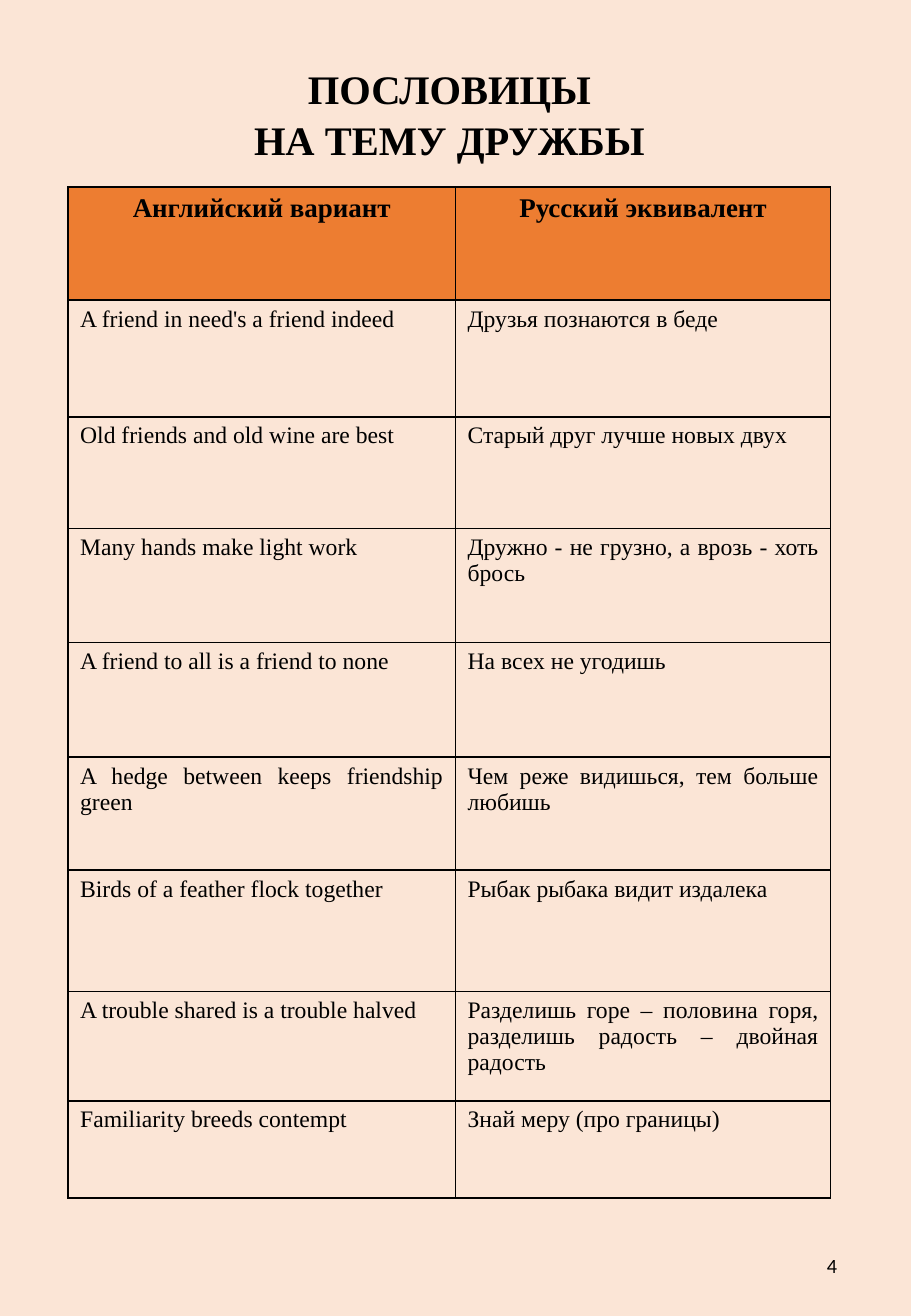
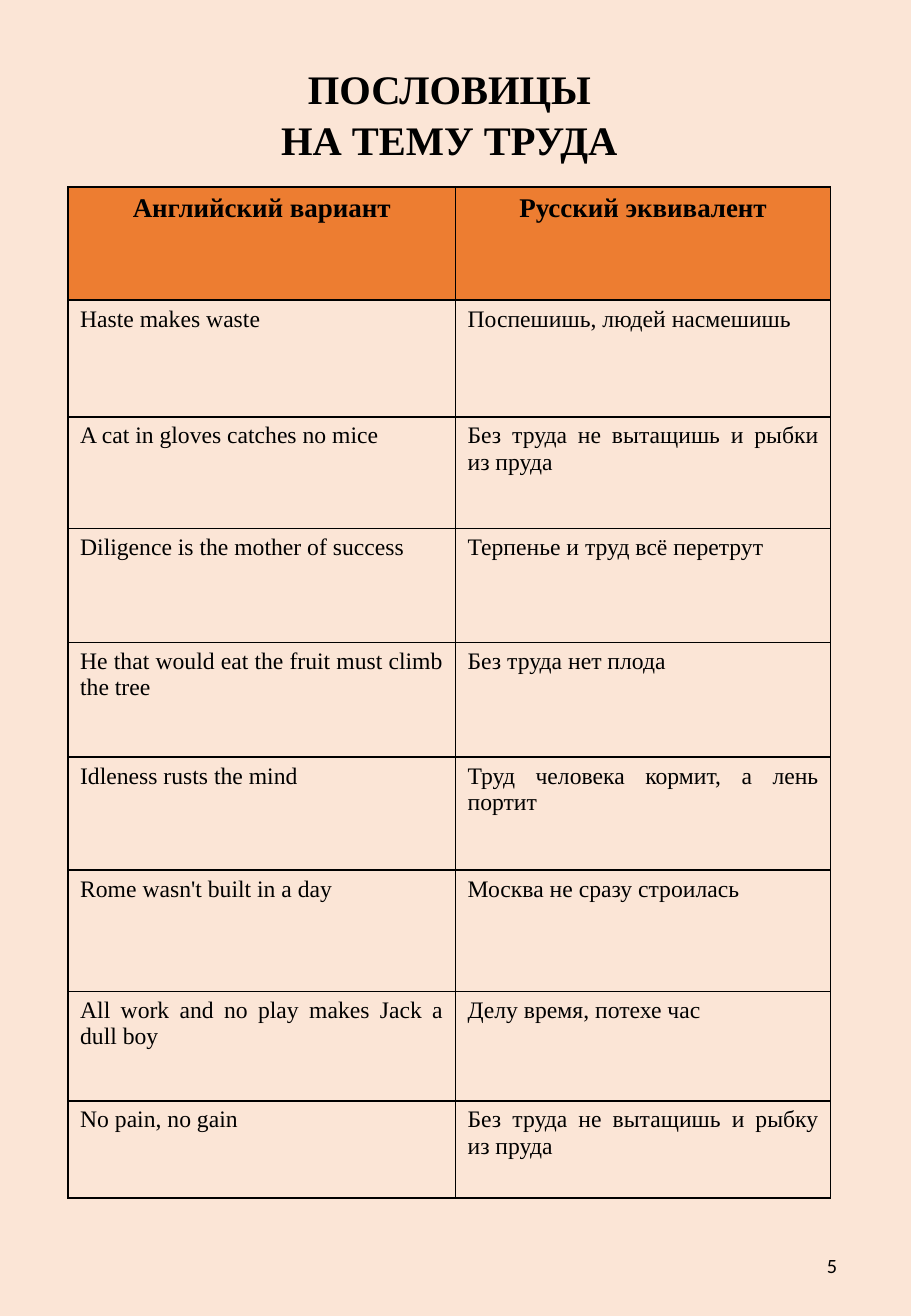
from lxml import etree
from pptx import Presentation
from pptx.dml.color import RGBColor
from pptx.enum.text import MSO_ANCHOR, MSO_AUTO_SIZE, PP_ALIGN
from pptx.oxml.ns import qn
from pptx.util import Inches, Pt

BLACK = RGBColor(0x00, 0x00, 0x00)
CREAM = RGBColor(0xFB, 0xE5, 0xD6)
ORANGE = RGBColor(0xED, 0x7D, 0x31)
CENTER, RIGHT, JUSTIFY = PP_ALIGN.CENTER, PP_ALIGN.RIGHT, PP_ALIGN.JUSTIFY
TOP, MIDDLE = MSO_ANCHOR.TOP, MSO_ANCHOR.MIDDLE
NO_FIT = MSO_AUTO_SIZE.NONE
SERIF, SANS = "Times New Roman", "Calibri"

TITLE_BOX = (0.56, 0.46, 6.28, 0.91)
TABLE_BOX = (0.56, 1.54, 6.28, 8.32)
PAGE_BOX = (6.67, 10.2, 0.32, 0.42)
COLS = (3.19, 3.09)
ROWS = (0.93, 0.96, 0.92, 0.94, 0.94, 0.93, 1, 0.9, 0.8)
HEAD = ("Английский вариант", "Русский эквивалент")

FRIENDS = (
    ("A friend in need's a friend indeed", "Друзья познаются в беде"),
    ("Old friends and old wine are best", "Старый друг лучше новых двух"),
    ("Many hands make light work", "Дружно - не грузно, а врозь - хоть брось"),
    ("A friend to all is a friend to none", "На всех не угодишь"),
    ("A hedge between keeps friendship green", "Чем реже видишься, тем больше любишь"),
    ("Birds of a feather flock together", "Рыбак рыбака видит издалека"),
    ("A trouble shared is a trouble halved",
     "Разделишь горе – половина горя, разделишь радость – двойная радость"),
    ("Familiarity breeds contempt", "Знай меру (про границы)"),
)
WORK = (
    ("Haste makes waste", "Поспешишь, людей насмешишь"),
    ("A cat in gloves catches no mice", "Без труда не вытащишь и рыбки из пруда"),
    ("Diligence is the mother of success", "Терпенье и труд всё перетрут"),
    ("He that would eat the fruit must climb the tree", "Без труда нет плода"),
    ("Idleness rusts the mind", "Труд человека кормит, а лень портит"),
    ("Rome wasn't built in a day", "Москва не сразу строилась"),
    ("All work and no play makes Jack a dull boy", "Делу время, потехе час"),
    ("No pain, no gain", "Без труда не вытащишь и рыбку из пруда"),
)
PAGES = (
    ("НА ТЕМУ ДРУЖБЫ", FRIENDS, 4),
    ("НА ТЕМУ ТРУДА", WORK, 5),
)


def write(frame, text, size, align, font=SERIF, bold=False):
    frame.text = text
    for para in frame.paragraphs:
        para.alignment = align
        for run in para.runs:
            run.font.name = font
            run.font.size = Pt(size)
            run.font.bold = bold
            run.font.color.rgb = BLACK


def add_border(cell):
    props = cell._tc.get_or_add_tcPr()
    for side in ("a:lnL", "a:lnR", "a:lnT", "a:lnB"):
        line = etree.SubElement(props, qn(side), w=str(Pt(1)))
        fill = etree.SubElement(line, qn("a:solidFill"))
        etree.SubElement(fill, qn("a:srgbClr"), val=str(BLACK))


def add_title(slide, box, topic):
    title = slide.shapes.title
    title.left, title.top, title.width, title.height = map(Inches, box)
    frame = title.text_frame
    frame.auto_size = NO_FIT
    frame.vertical_anchor = TOP
    write(frame, f"ПОСЛОВИЦЫ\n{topic}", 24, CENTER, bold=True)
    for para in frame.paragraphs:
        para.line_spacing = 1.05


def add_grid(slide, box, pairs):
    table = slide.shapes.add_table(len(ROWS), len(COLS), *map(Inches, box)).table
    table.horz_banding = False
    for col, width in zip(table.columns, COLS):
        col.width = Inches(width)
    for num, (row, height, texts) in enumerate(zip(table.rows, ROWS, (HEAD, *pairs))):
        row.height = Inches(height)
        for cell, text in zip(row.cells, texts):
            add_border(cell)
            if num == 0:
                cell.fill.solid()
                cell.fill.fore_color.rgb = ORANGE
                write(cell.text_frame, text, 16, CENTER, bold=True)
            else:
                cell.fill.background()
                write(cell.text_frame, text, 14, JUSTIFY)


def add_number(slide, box, number):
    frame = slide.shapes.add_textbox(*map(Inches, box)).text_frame
    frame.word_wrap = True
    frame.vertical_anchor = MIDDLE
    write(frame, str(number), 12, RIGHT, font=SANS)


def add_page(deck, topic, pairs, number):
    slide = deck.slides.add_slide(deck.slide_layouts[5])
    add_title(slide, TITLE_BOX, topic)
    add_grid(slide, TABLE_BOX, pairs)
    add_number(slide, PAGE_BOX, number)


def main():
    deck = Presentation()
    deck.slide_width, deck.slide_height = Inches(7.5), Inches(10.83)
    back = deck.slide_master.background.fill
    back.solid()
    back.fore_color.rgb = CREAM
    for page in PAGES:
        add_page(deck, *page)
    deck.save("out.pptx")


if __name__ == "__main__":
    main()
